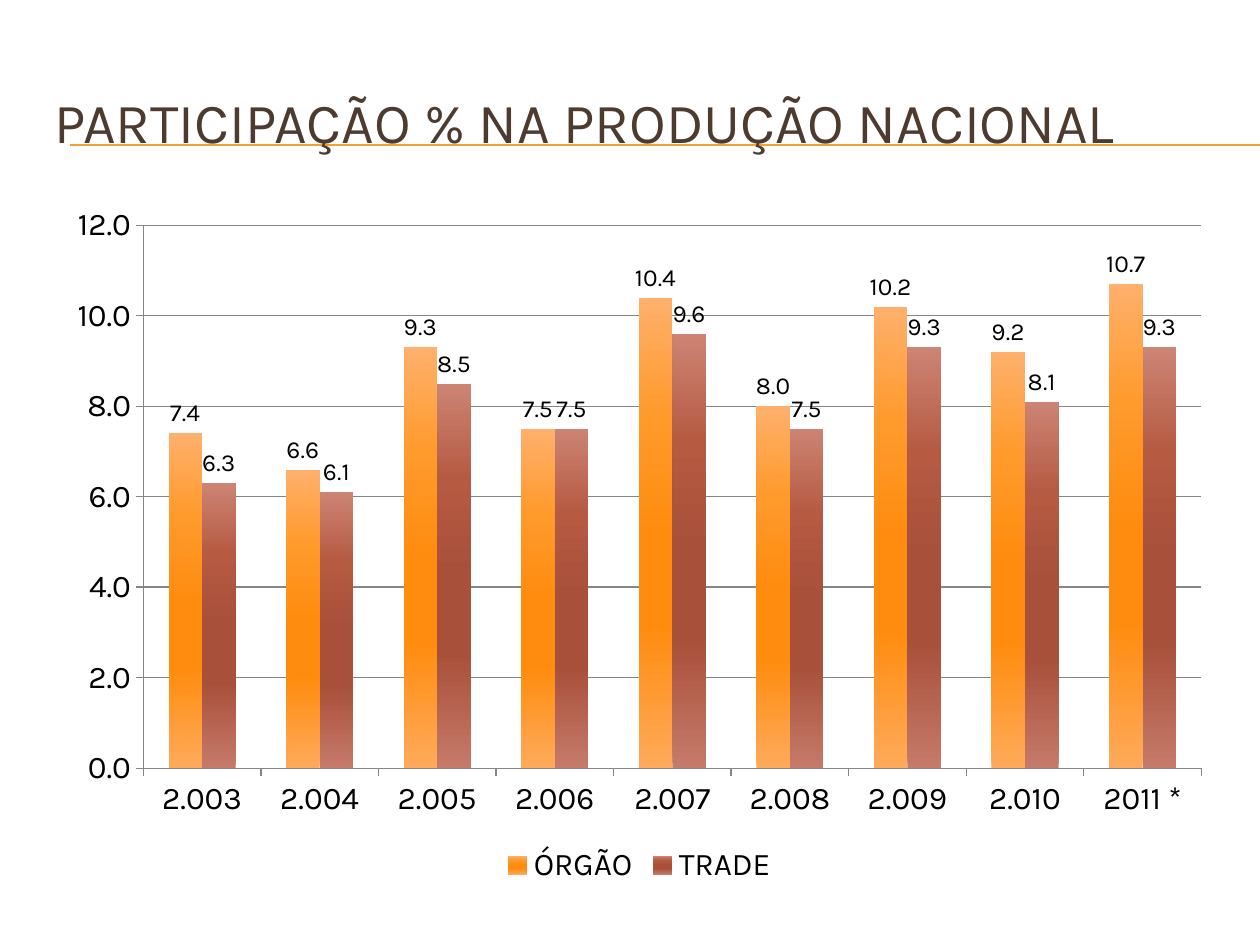
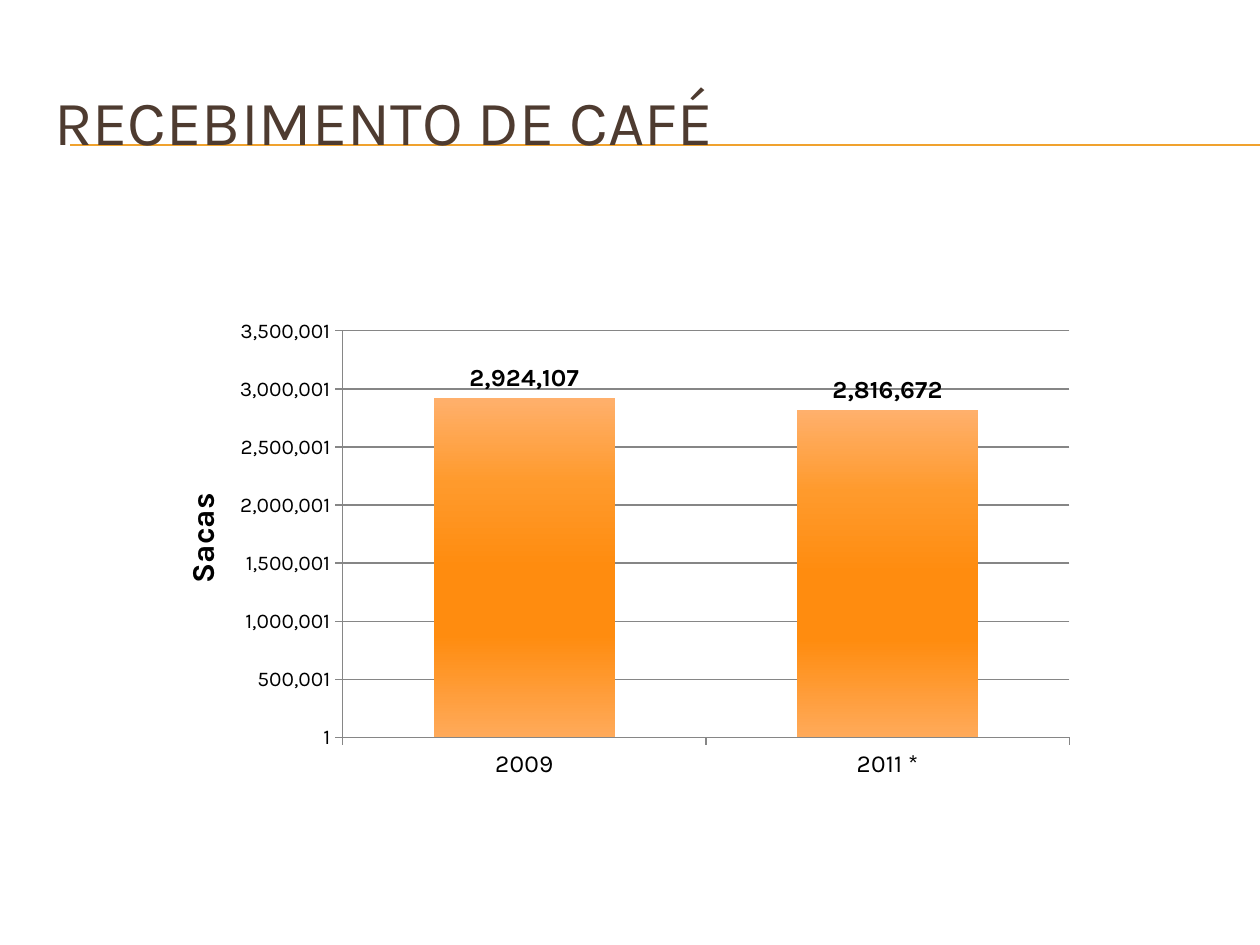
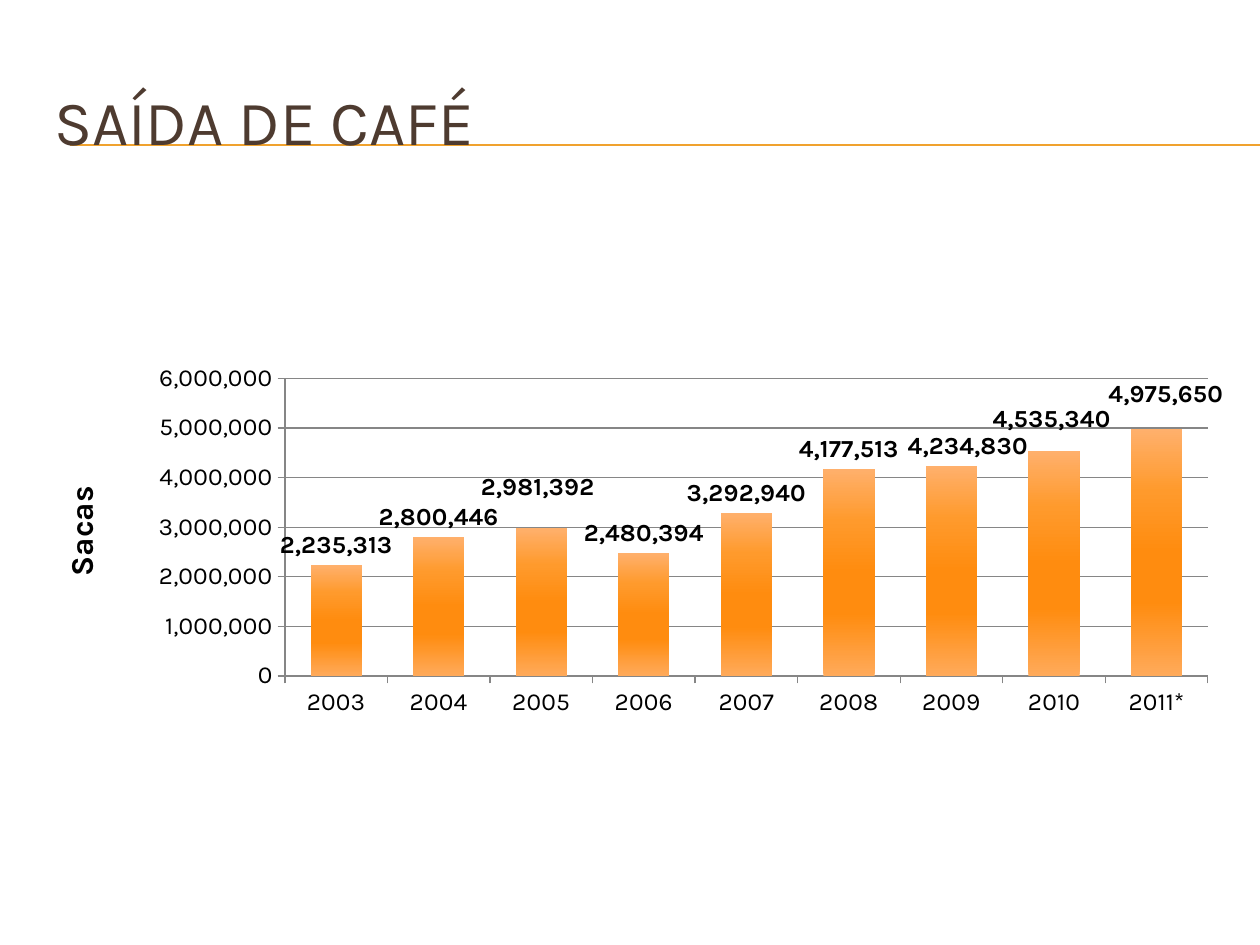
from copy import deepcopy

from lxml.etree import SubElement
from pptx import Presentation
from pptx.chart.data import CategoryChartData
from pptx.dml.color import RGBColor
from pptx.enum.chart import XL_CHART_TYPE as ChartType
from pptx.enum.chart import XL_LABEL_POSITION as LabelPos
from pptx.enum.chart import XL_LEGEND_POSITION as LegendPos
from pptx.enum.chart import XL_TICK_MARK as Tick
from pptx.enum.shapes import MSO_CONNECTOR as Connector
from pptx.enum.text import MSO_ANCHOR as Anchor
from pptx.oxml import parse_xml
from pptx.oxml.ns import nsdecls, qn
from pptx.util import Cm, Pt

COLORS = {"rule": "F0A22E", "title": "4E3B30", "text": "000000", "grid": "868686"}
BAR_STOPS = [
    [(0, "FFAA5A"), (30, "FF8C0F"), (50, "FF8C0F"), (75, "FF9A2C"), (100, "FFB06C")],
    [(0, "C67A6A"), (30, "A8503A"), (50, "A8503A"), (75, "B65A42"), (100, "CC8474")],
]
FONT = "Karla"


def rgb(name):
    return RGBColor.from_string(COLORS[name])


def put_text(tf, text, size=18, color="text", bold=False):
    r = tf.paragraphs[0].add_run()
    r.text = text
    style_font(r.font, size, color, bold)


def style_font(font, size, color="text", bold=False):
    font.name, font.size, font.bold = FONT, Pt(size), bold
    font.color.rgb = rgb(color)


def set_layout(parent, index, modes, percents):
    for old in parent.findall(qn("c:layout")):
        parent.remove(old)
    layout = parse_xml(f"<c:layout {nsdecls('c')}/>")
    manual = SubElement(layout, qn("c:manualLayout"))
    for tag, val in modes.items():
        SubElement(manual, qn(f"c:{tag}"), val=val)
    for tag, val in zip("xywh", percents):
        SubElement(manual, qn(f"c:{tag}"), val=f"{val / 100:.3f}")
    parent.insert(index, layout)


class Deck:
    edge = {"xMode": "edge", "yMode": "edge"}

    def __init__(self):
        self.prs = Presentation()
        self.prs.slide_width, self.prs.slide_height = Cm(25.4), Cm(19.05)
        self.s = None

    def slide(self, title, size=36):
        self.s = self.prs.slides.add_slide(self.prs.slide_layouts[6])
        for y in (2.92, 2.94):
            self.rule(1.42, 25.4, y)
        self.title(title, size)

    def rule(self, left, right, y):
        line = self.s.shapes.add_connector(Connector.STRAIGHT, Cm(left), Cm(y), Cm(right), Cm(y))
        line.line.color.rgb = rgb("rule")
        line.line.width = Pt(0.75)
        SubElement(line._element.spPr, qn("a:effectLst"))

    def title(self, text, size):
        tf = self.s.shapes.add_textbox(Cm(0.84), Cm(1.26), Cm(24.13), Cm(2.34)).text_frame
        tf.word_wrap = True
        tf.vertical_anchor = Anchor.MIDDLE
        put_text(tf, text, size=size, color="title")

    def chart(self, box, cats, series, fmt, gap, cat_size=18, val_size=18, plot=None):
        data = CategoryChartData(number_format=fmt)
        data.categories = cats
        for name, vals in series.items():
            data.add_series(name, vals)
        chart = self.s.shapes.add_chart(
            ChartType.COLUMN_CLUSTERED, *(Cm(v) for v in box), data).chart
        chart.has_title = False
        style_font(chart.font, 18)
        chart.has_legend = len(series) > 1
        if chart.has_legend:
            chart.legend.position = LegendPos.BOTTOM
            chart.legend.include_in_layout = False
        self.axis(chart.category_axis, cat_size)
        self.axis(chart.value_axis, val_size)
        chart.value_axis.has_major_gridlines = True
        self.grey(chart.value_axis.major_gridlines.format.line)
        chart.value_axis.tick_labels.number_format = fmt
        chart.value_axis.tick_labels.number_format_is_linked = False
        bars = chart.plots[0]
        bars.gap_width, bars.overlap, bars.vary_by_categories = gap, 0, False
        for ser, stops in zip(bars.series, BAR_STOPS):
            self.bar_fill(ser, stops)
            self.labels(ser, fmt, bold=len(series) == 1)
        if plot:
            area = chart._chartSpace.find(".//" + qn("c:plotArea"))
            set_layout(area, 0, {"layoutTarget": "inner", **self.edge}, plot)
        return chart

    def grey(self, line):
        line.color.rgb = rgb("grid")
        line.width = Pt(0.75)

    def axis(self, axis, size):
        axis.major_tick_mark, axis.minor_tick_mark = Tick.OUTSIDE, Tick.NONE
        self.grey(axis.format.line)
        style_font(axis.tick_labels.font, size)

    def bar_fill(self, ser, stops):
        ser.invert_if_negative = False
        ser.format.line.fill.background()
        gs = "".join(f'<a:gs pos="{pos * 1000}"><a:srgbClr val="{color}"/></a:gs>'
                     for pos, color in stops)
        ser._element.spPr.insert(0, parse_xml(
            f'<a:gradFill {nsdecls("a")} rotWithShape="1"><a:gsLst>{gs}</a:gsLst>'
            '<a:lin ang="16200000" scaled="0"/></a:gradFill>'))

    def labels(self, ser, fmt, bold):
        labels = ser.data_labels
        labels.show_value = True
        labels.position = LabelPos.OUTSIDE_END
        labels.number_format, labels.number_format_is_linked = fmt, False
        style_font(labels.font, 14, bold=bold)

    def move_labels(self, chart, offsets):
        labels = chart._chartSpace.find(".//" + qn("c:ser") + "/" + qn("c:dLbls"))
        for leader in labels.findall(qn("c:showLeaderLines")):
            leader.set("val", "0")
        shared = [e for e in labels if e.tag != qn("c:showLeaderLines")]
        for place, (idx, offset) in enumerate(offsets.items()):
            label = parse_xml(f'<c:dLbl {nsdecls("c")}><c:idx val="{idx}"/></c:dLbl>')
            label.extend(deepcopy(shared))
            set_layout(label, 1, {}, offset)
            labels.insert(place, label)

    def axis_title(self, chart, text, at):
        tf = chart.value_axis.axis_title.text_frame
        put_text(tf, text, bold=True)
        title = chart._chartSpace.find(".//" + qn("c:valAx") + "/" + qn("c:title"))
        body = title.find(".//" + qn("a:bodyPr"))
        body.set("rot", "-5400000")
        body.set("vert", "horz")
        set_layout(title, 1, self.edge, at)


def main():
    deck = Deck()

    deck.slide("PARTICIPAÇÃO % NA PRODUÇÃO NACIONAL", size=32.4)
    deck.chart(
        (1.09, 3.89, 23.6, 14.05),
        [f"2.{n:03}" for n in range(3, 11)] + ["2011 *"],
        {"ÓRGÃO": (7.4, 6.6, 9.3, 7.5, 10.4, 8, 10.2, 9.2, 10.7),
         "TRADE": (6.3, 6.1, 8.5, 7.5, 9.6, 7.5, 9.3, 8.1, 9.3)},
        "0.0", gap=150)

    deck.slide("RECEBIMENTO DE CAFÉ")
    intake = deck.chart(
        (3.1, 6.12, 18.95, 10.01), ["2009", "2011 *"],
        {"Series 1": (2924107, 2816672)},
        "#,##0", gap=100, cat_size=14, val_size=12, plot=(20.1, 5.5, 77.3, 81.9))
    intake.value_axis.minimum_scale = 1
    deck.axis_title(intake, "Sacas", (2.3, 37))

    deck.slide("SAÍDA DE CAFÉ")
    output = deck.chart(
        (1.1, 7.12, 23.7, 7.54),
        [str(year) for year in range(2003, 2011)] + ["2011*"],
        {"Series 1": (2235313, 2800446, 2981392, 2480394, 3292940,
                      4177513, 4234830, 4535340, 4975650)},
        "#,##0", gap=100, cat_size=14, val_size=14, plot=(19.6, 6.8, 78.5, 79.5))
    deck.axis_title(output, "Sacas", (0, 34))
    deck.move_labels(output, {2: (-0.3, -5.6), 6: (1.4, 0), 7: (-0.2, -3.2), 8: (0.8, -4)})

    deck.prs.save("out.pptx")


if __name__ == "__main__":
    main()
